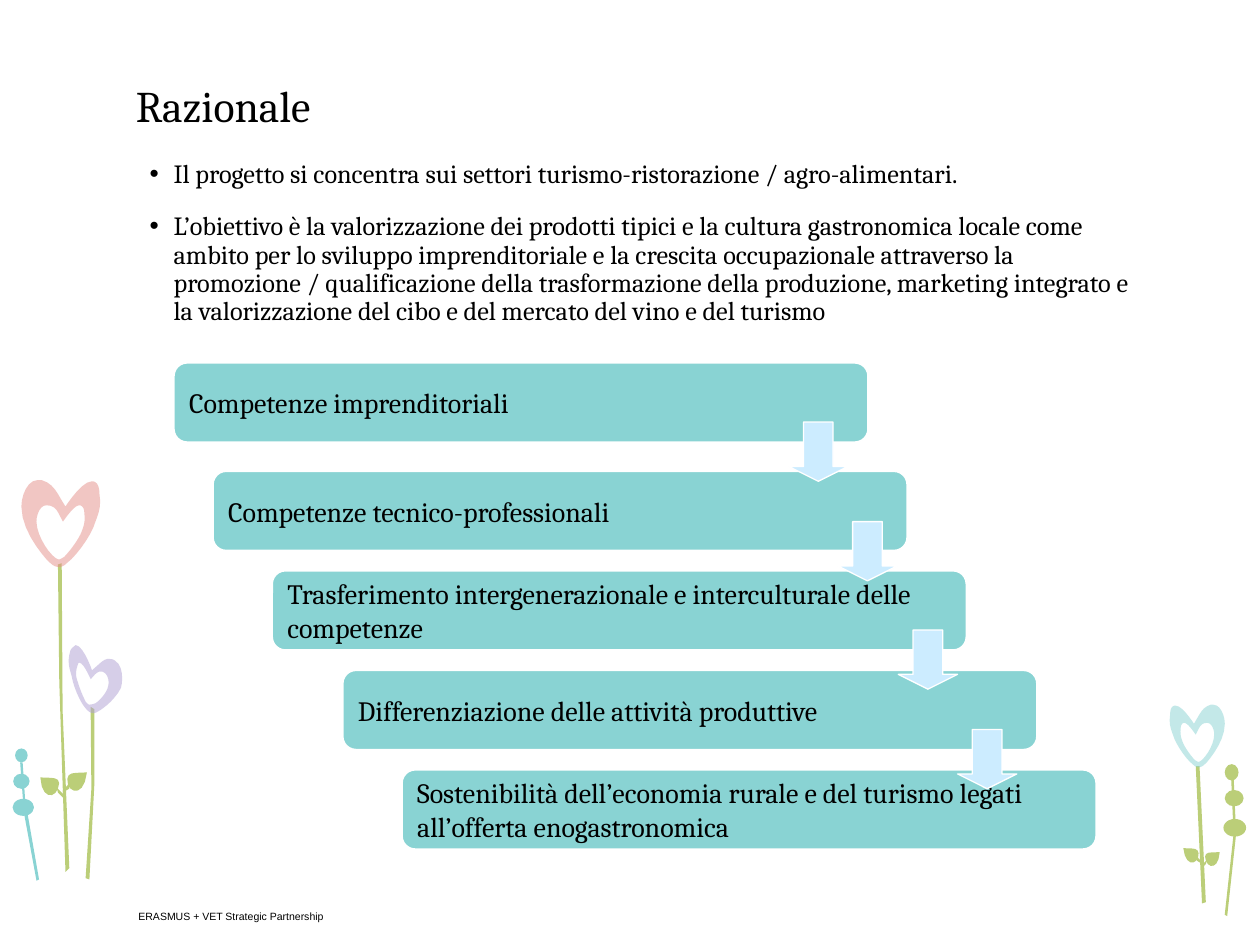
from typing import NamedTuple
from lxml.etree import SubElement as Sub
from pptx import Presentation as Deck
from pptx.dml.color import RGBColor as RGB
from pptx.enum.shapes import MSO_SHAPE as Kind
from pptx.enum.text import MSO_ANCHOR as Anchor, PP_ALIGN as Align
from pptx.oxml.ns import qn
from pptx.util import Inches, Pt

COLS, ROWS = 100, 75
BLACK = RGB(0x00, 0x00, 0x00)
WHITE = RGB(0xFF, 0xFF, 0xFF)
TEAL = RGB(0x89, 0xD3, 0xD3)
SKY = RGB(0xCC, 0xEC, 0xFF)
GREEN = RGB(0xBB, 0xCE, 0x78)
ROSE = RGB(0xE5, 0x8E, 0x89)
LILAC = RGB(0xAF, 0x9F, 0xD3)

Dot = tuple[float, float]
Path = list[Dot]


class Place(NamedTuple):
    col: float = 0
    row: float = 0
    wide: float = 1
    high: float = 1


class Heart(NamedTuple):
    rings: list[Path]
    place: Place
    color: RGB


class Bud(NamedTuple):
    col: float
    row: float
    wide: float
    high: float
    color: RGB


class Stem(NamedTuple):
    edge: Path
    color: RGB


class Step(NamedTuple):
    col: float
    row: float
    lines: list[str]


class Style(NamedTuple):
    size: float
    font: str = "Cambria"
    lead: float | None = None


deck = Deck()
deck.slide_width, deck.slide_height = Inches(10), Inches(7.5)
slide = deck.slides.add_slide(deck.slide_layouts[6])
shapes = slide.shapes
UNIT_X, UNIT_Y = deck.slide_width / COLS, deck.slide_height / ROWS


def at(col: float, row: float) -> tuple[int, int]:
    return round(col * UNIT_X), round(row * UNIT_Y)


def paint(shape, color: RGB, line: float = 0, alpha: int = 100) -> None:
    shape.shadow.inherit = False
    shape.fill.solid()
    shape.fill.fore_color.rgb = color
    if line:
        shape.line.color.rgb = WHITE
        shape.line.width = Pt(line)
    else:
        shape.line.fill.background()
    if alpha < 100:
        tint = shape.fill._xPr.find(qn("a:solidFill"))[0]
        Sub(tint, qn("a:alpha")).set("val", str(alpha * 1000))


def curve(path: Path, cuts: int = 6) -> Path:
    out = [path[0]]
    for i in range(0, len(path) - 3, 3):
        a, b, c, d = path[i:i + 4]
        for n in range(1, cuts + 1):
            t = n / cuts
            u = 1 - t
            mix = (u ** 3, 3 * u * u * t, 3 * u * t * t, t ** 3)
            out.append(tuple(sum(m * p[k] for m, p in zip(mix, (a, b, c, d))) for k in (0, 1)))
    return out


def trace(rings: list[Path], color: RGB, place: Place = Place(), alpha: int = 100) -> None:
    sets = [[at(place.col + place.wide * x, place.row + place.high * y) for x, y in ring]
            for ring in rings]
    pen = shapes.build_freeform(*sets[0][0])
    pen.add_line_segments(sets[0][1:])
    for ring in sets[1:]:
        pen.move_to(*ring[0])
        pen.add_line_segments(ring[1:])
    paint(pen.convert_to_shape(), color, alpha=alpha)


def write(frame, lines: list[str], style: Style, anchor=Anchor.TOP, bullet: bool = False) -> None:
    frame.word_wrap = True
    frame.vertical_anchor = anchor
    for i, line in enumerate(lines):
        para = frame.add_paragraph() if i else frame.paragraphs[0]
        para.alignment = Align.LEFT
        if style.lead:
            para.line_spacing = style.lead
        if bullet:
            props = para._p.get_or_add_pPr()
            props.set("marL", str(Inches(0.22)))
            props.set("indent", str(-Inches(0.19)))
            if i:
                para.space_before = Pt(13.5)
            Sub(props, qn("a:buFont")).set("typeface", "Arial")
            Sub(props, qn("a:buChar")).set("char", "•")
        run = para.add_run()
        run.text = line
        run.font.size = Pt(style.size)
        run.font.name = style.font
        run.font.color.rgb = BLACK


def label(place: Place, lines: list[str], style: Style, anchor=Anchor.TOP, bullet: bool = False) -> None:
    box = shapes.add_textbox(*at(*place[:2]), *at(*place[2:]))
    write(box.text_frame, lines, style, anchor, bullet)


TULIP = [
    [(4.7, 44.4), (4.5, 44.4), (4.3, 44.2), (4.1, 44), (3.6, 43.5), (2.9, 42.3), (2.9, 41.4),
     (2.9, 40.8), (3.2, 40.1), (3.7, 40.1), (4.5, 40.1), (4.6, 40.7), (5, 41.4),
     (5.3, 41), (5.9, 40.1), (6.3, 40.1), (6.5, 40.1), (6.7, 40.3), (6.7, 40.7),
     (6.8, 41.5), (6.6, 41.9), (6.4, 42.4), (6.1, 43), (5.5, 43.8), (5.1, 44.2),
     (4.9, 44.3), (4.8, 44.4), (4.7, 44.4)],
    [(3, 38.1), (2.2, 38.1), (1.7, 39.3), (1.7, 40.2), (1.7, 41.9), (3, 43.6), (3.7, 44.4),
     (4.1, 44.8), (4.3, 45), (4.7, 45), (4.9, 45), (5.1, 44.9), (5.3, 44.7),
     (6, 44.2), (7, 42.8), (7.4, 41.9), (7.7, 41), (8.1, 40.4), (7.9, 39.2),
     (7.9, 38.4), (7.6, 38.2), (7.3, 38.2), (6.6, 38.2), (5.6, 39.6), (5.2, 40.2),
     (4.5, 39.1), (4.3, 38.4), (3.3, 38.1), (3.2, 38.1), (3.1, 38.1), (3, 38.1)],
]
BLOOM = [
    [(7.2, 55.9), (7.1, 56), (7, 55.9), (6.8, 55.7), (6.6, 55.3), (6.3, 54.6), (6.2, 54.2),
     (6, 53.7), (6, 53.4), (6.1, 53), (6.2, 52.7), (6.2, 52.6), (6.3, 52.6),
     (6.6, 52.6), (7, 53.5), (7.2, 53.9), (7.5, 53.6), (7.6, 53.4), (7.9, 53.3),
     (8.5, 53.2), (8.7, 54), (8.6, 54.4), (8.5, 55), (7.9, 55.6), (7.6, 55.8),
     (7.4, 55.9), (7.3, 55.9), (7.2, 55.9)],
    [(6, 51.2), (5.9, 51.3), (5.7, 51.4), (5.6, 51.6), (5.3, 52.5), (5.5, 53), (5.7, 53.7),
     (5.8, 54.4), (6.3, 55.6), (6.7, 56.1), (7, 56.5), (7.2, 56.6), (7.4, 56.6),
     (7.6, 56.6), (7.7, 56.5), (7.9, 56.4), (8.4, 56.1), (9.2, 55.4), (9.6, 54.6),
     (9.8, 53.9), (9.7, 52.8), (9.2, 52.5), (9, 52.3), (8.8, 52.3), (8.5, 52.3),
     (8.1, 52.4), (7.8, 52.8), (7.3, 53.2), (7.1, 52.6), (6.5, 51.2), (6, 51.2)],
]
LEAVES = [
    [(5.4, 62.3), (5.1, 61.1), (6, 61.4), (6.9, 61.3), (6.7, 63.1), (5.7, 63), (5.4, 62.3)],
    [(4.6, 62.6), (5, 61.5), (4, 61.8), (3.2, 61.7), (3.3, 63.4), (4.3, 63.4), (4.6, 62.6)],
]
STALKS = [
    [(4.5, 62.5), (5.1, 63.1), (5, 63.3), (4.6, 62.9), (4.5, 62.5)],
    [(5.6, 62.1), (5, 62.7), (5, 62.9), (5.5, 62.6), (5.6, 62.1)],
]
HEARTS = [
    Heart(TULIP, Place(98.4, 28.5, -0.7, 0.72), TEAL),
    Heart(BLOOM, Place(), LILAC),
    Heart(TULIP, Place(), ROSE),
]
STEMS = [
    Stem([(94.9, 60.8), (95.4, 71.7), (95.7, 71.6), (95.2, 60.8), (94.9, 60.8)], GREEN),
    Stem([(97.7, 61.5), (97.9, 66.2), (97.2, 72.6), (97.4, 72.7), (98.1, 66.2), (97.9, 61.5),
          (97.7, 61.5)], GREEN),
    Stem([(7.1, 69.8), (7.5, 62.1), (7.5, 56.3), (7.2, 56.1), (7.26, 62.6), (6.8, 69.7),
          (7.1, 69.8)], GREEN),
    Stem([(4.6, 44.8), (4.71, 54.1), (5.2, 69.2), (5.5, 68.9), (4.97, 56.4), (4.9, 44.7),
          (4.6, 44.8)], GREEN),
    Stem([(1.6, 60.5), (1.9, 64.5), (2.9, 69.9), (3.1, 69.8), (2, 63.5), (1.8, 60.5),
          (1.6, 60.5)], TEAL),
]
BUDS = [
    Bud(97.2, 60.65, 1.1, 1.3, GREEN), Bud(97.2, 62.7, 1.5, 1.3, GREEN),
    Bud(97.1, 65, 1.8, 1.4, GREEN), Bud(1.2, 59.4, 1, 1.1, TEAL),
    Bud(1.05, 61.4, 1.3, 1.2, TEAL), Bud(1, 63.4, 1.7, 1.35, TEAL),
]
STEPS = [
    Step(13.8, 28.8, ["Competenze imprenditoriali"]),
    Step(16.9, 37.4, ["Competenze tecnico-professionali"]),
    Step(21.6, 45.3, ["Trasferimento intergenerazionale e interculturale delle", "competenze"]),
    Step(27.2, 53.2, ["Differenziazione delle attività produttive"]),
    Step(31.9, 61.1, ["Sostenibilità dell’economia rurale e del turismo legati",
                      "all’offerta enogastronomica"]),
]
ARROWS = [(62.6, 33.5), (66.5, 41.4), (71.3, 50), (76, 57.9)]

for stem in STEMS:
    trace([stem.edge], stem.color)
for heart in HEARTS:
    trace([curve(ring) for ring in heart.rings], heart.color, heart.place, 50)
for bud in BUDS:
    paint(shapes.add_shape(Kind.OVAL, *at(*bud[:2]), *at(*bud[2:4])), bud.color)
for place in (Place(), Place(99.3, 19.5, -0.78, 0.78)):
    for ring in [curve(leaf) for leaf in LEAVES] + STALKS:
        trace([ring], GREEN, place)

label(Place(9.8, 2.1, 80, 8.9), ["Razionale"], Style(25, lead=0.9), Anchor.BOTTOM)
label(Place(10.6, 12.3, 80, 44.2), [
    "Il progetto si concentra sui settori turismo-ristorazione / agro-alimentari.",
    "L’obiettivo è la valorizzazione dei prodotti tipici e la cultura gastronomica locale come "
    "ambito per lo sviluppo imprenditoriale e la crescita occupazionale attraverso la "
    "promozione / qualificazione della trasformazione della produzione, marketing integrato "
    "e la valorizzazione del cibo e del mercato del vino e del turismo",
], Style(15, lead=0.9), bullet=True)
label(Place(10, 71.2, 47.5, 3), ["ERASMUS + VET Strategic Partnership"], Style(6, "Arial"), Anchor.MIDDLE)

for step in STEPS:
    card = shapes.add_shape(Kind.ROUNDED_RECTANGLE, *at(step.col, step.row), *at(55.1, 6.3))
    paint(card, TEAL, 1)
    card.text_frame.margin_left = card.text_frame.margin_right = Inches(0.09)
    write(card.text_frame, step.lines, Style(16), Anchor.MIDDLE)
for spot in ARROWS:
    arrow = shapes.add_shape(Kind.DOWN_ARROW, *at(*spot), *at(4.7, 4.7))
    arrow.adjustments[0], arrow.adjustments[1] = 0.5, 0.25
    paint(arrow, SKY, 0.75)

deck.save("out.pptx")
